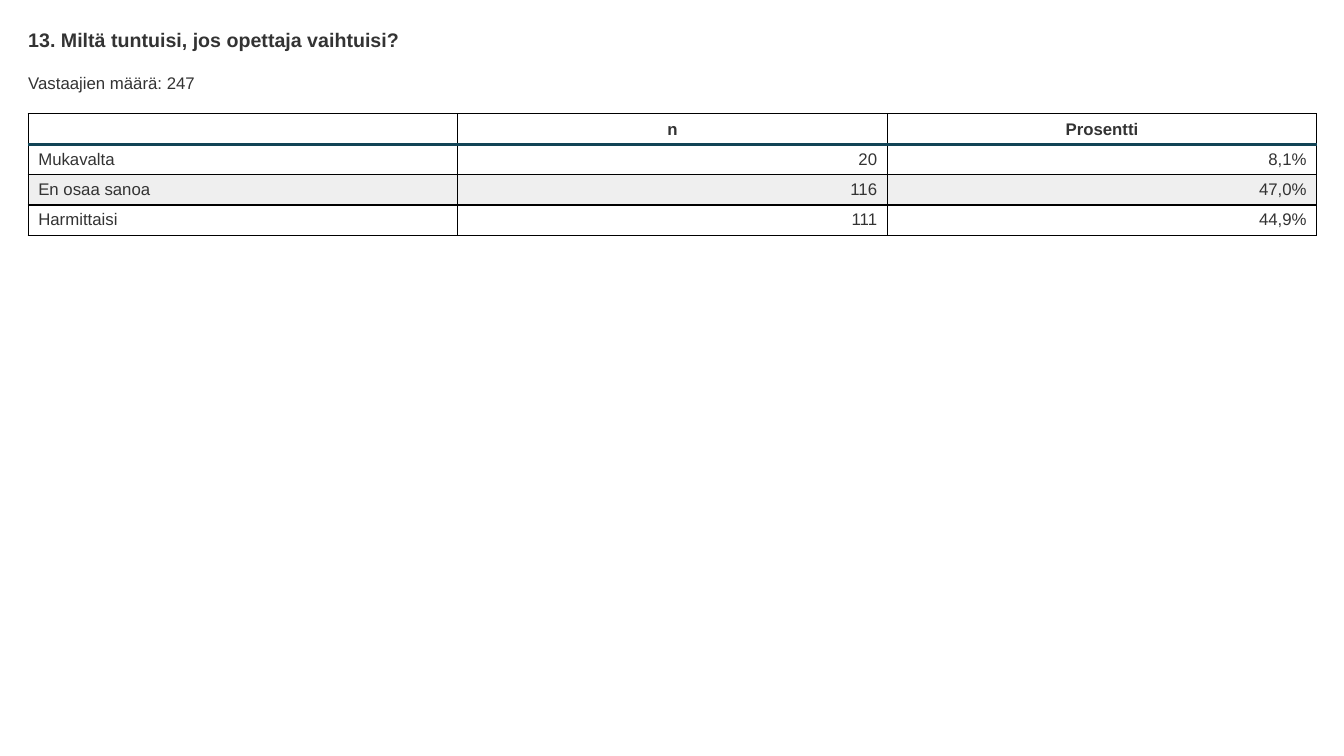
from dataclasses import dataclass

from lxml import etree
from pptx import Presentation
from pptx.dml.color import RGBColor
from pptx.enum.text import MSO_ANCHOR, MSO_AUTO_SIZE, PP_ALIGN
from pptx.oxml.ns import qn
from pptx.util import Inches, Pt

LEFT, CENTER, RIGHT = PP_ALIGN.LEFT, PP_ALIGN.CENTER, PP_ALIGN.RIGHT
TOP = MSO_ANCHOR.TOP
MIDDLE = MSO_ANCHOR.MIDDLE
NO_AUTOSIZE = MSO_AUTO_SIZE.NONE
TITLE_ONLY = 5


@dataclass(frozen=True)
class Theme:
    font: str = "Arial"
    text: str = "333333"
    border: str = "000000"
    header_rule: str = "124456"
    row: str = "FFFFFF"
    banded_row: str = "EFEFEF"
    title_size: int = 14
    body_size: int = 12
    border_width: float = 1
    header_rule_width: float = 2


THEME = Theme()
SLIDE_WIDTH, SLIDE_HEIGHT = Inches(13.33), Inches(7.5)
MARGIN = Inches(0.28)
CONTENT_WIDTH = Inches(12.78)
ROW_HEIGHT = Inches(0.3)

ANSWERS = [
    ("", "n", "Prosentti"),
    ("Mukavalta", "20", "8,1%"),
    ("En osaa sanoa", "116", "47,0%"),
    ("Harmittaisi", "111", "44,9%"),
]


def set_attributes(target, values):
    for name, value in values.items():
        setattr(target, name, value)


def write_text(text_frame, text, size, bold=False, alignment=LEFT):
    paragraph = text_frame.paragraphs[0]
    paragraph.alignment = alignment
    if not text:
        # An empty cell still takes its height from the end-of-paragraph size.
        etree.SubElement(paragraph._p, qn("a:endParaRPr"), sz=str(size * 100))
        return
    run = paragraph.add_run()
    run.text = text
    set_attributes(run.font, {"name": THEME.font, "size": Pt(size), "bold": bold})
    run.font.color.rgb = RGBColor.from_string(THEME.text)


def format_text_box(shape, top, height, text, size, bold=False):
    set_attributes(shape, {"left": MARGIN, "top": top, "width": CONTENT_WIDTH, "height": height})
    set_attributes(shape.text_frame, {
        "margin_left": 0, "margin_right": 0, "margin_top": 0, "margin_bottom": 0,
        "word_wrap": True, "auto_size": NO_AUTOSIZE, "vertical_anchor": TOP,
    })
    write_text(shape.text_frame, text, size, bold)


def add_border(cell, side, color, width):
    """Draw one side of a cell; call in the order L, R, T, B and before the fill."""
    line = etree.SubElement(cell._tc.get_or_add_tcPr(), qn(f"a:ln{side}"), w=str(Pt(width)))
    fill = etree.SubElement(line, qn("a:solidFill"))
    etree.SubElement(fill, qn("a:srgbClr"), val=color)


def format_cell(cell, text, row, column):
    is_header = row == 0
    alignment = CENTER if is_header else RIGHT if column else LEFT
    write_text(cell.text_frame, text, THEME.body_size, is_header, alignment)
    cell.vertical_anchor = MIDDLE
    for side in "LRTB":
        if (row, side) in ((0, "B"), (1, "T")):
            add_border(cell, side, THEME.header_rule, THEME.header_rule_width)
        else:
            add_border(cell, side, THEME.border, THEME.border_width)
    is_banded = row and row % 2 == 0
    cell.fill.solid()
    cell.fill.fore_color.rgb = RGBColor.from_string(THEME.banded_row if is_banded else THEME.row)


def add_answer_table(slide, top, rows):
    table = slide.shapes.add_table(
        len(rows), len(rows[0]), MARGIN, top, CONTENT_WIDTH, ROW_HEIGHT * len(rows)
    ).table
    set_attributes(table, {"first_row": False, "horz_banding": False})
    for row, texts in enumerate(rows):
        for column, text in enumerate(texts):
            format_cell(table.cell(row, column), text, row, column)


def main():
    presentation = Presentation()
    set_attributes(presentation, {"slide_width": SLIDE_WIDTH, "slide_height": SLIDE_HEIGHT})
    slide = presentation.slides.add_slide(presentation.slide_layouts[TITLE_ONLY])
    format_text_box(slide.shapes.title, MARGIN, Inches(0.23),
                    "13. Miltä tuntuisi, jos opettaja vaihtuisi?", THEME.title_size, bold=True)
    respondents = slide.shapes.add_textbox(0, 0, 0, 0)
    format_text_box(respondents, Inches(0.72), Inches(0.2),
                    "Vastaajien määrä: 247", THEME.body_size)
    add_answer_table(slide, Inches(1.13), ANSWERS)
    presentation.save("out.pptx")


if __name__ == "__main__":
    main()
